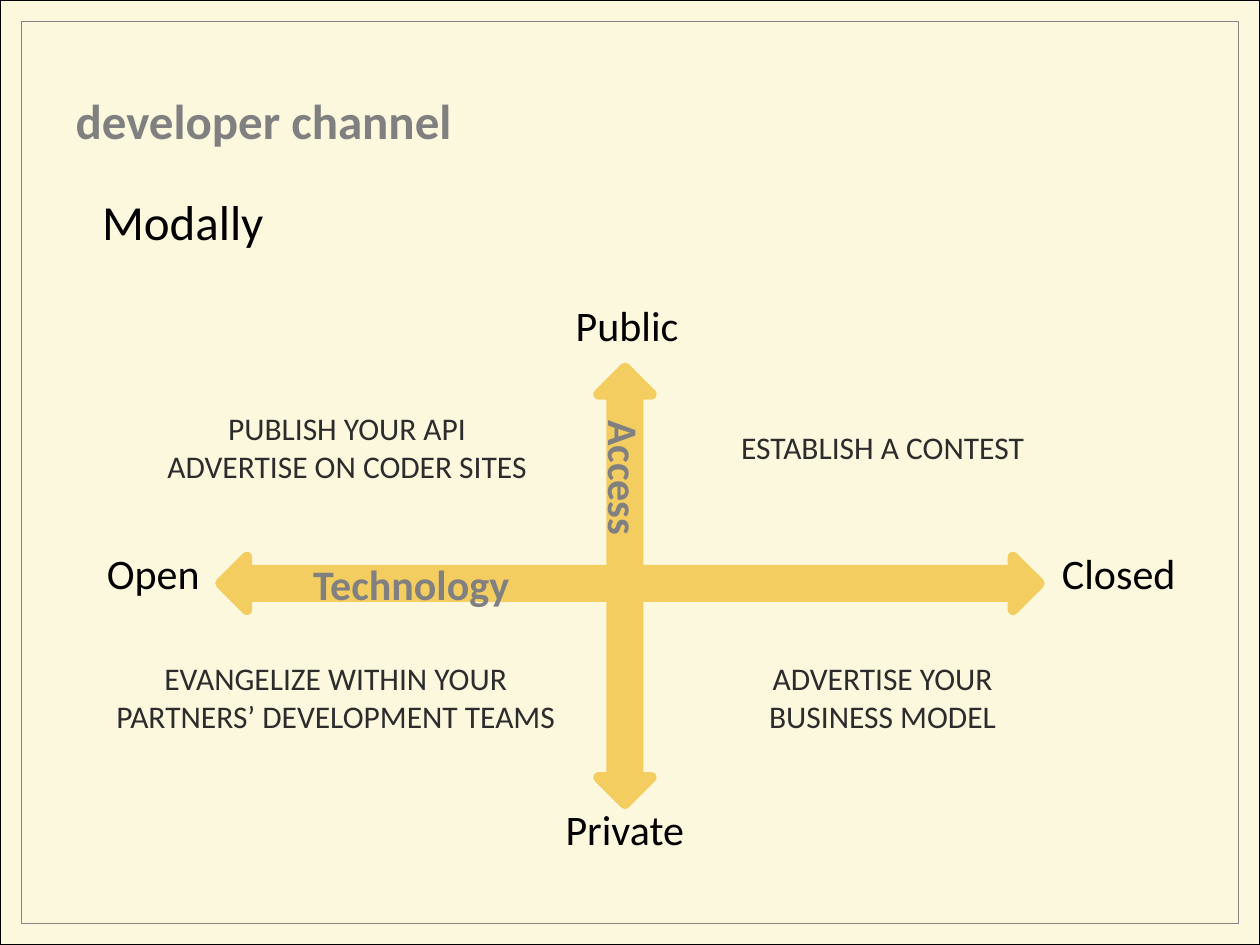
from pptx import Presentation
from pptx.dml.color import RGBColor
from pptx.enum.shapes import MSO_SHAPE as Shape
from pptx.enum.text import MSO_ANCHOR as Anchor, MSO_AUTO_SIZE as AutoSize, PP_ALIGN as Align
from pptx.util import Inches, Pt

CREAM, GOLD, GREY, BLACK, INK = "FCF8DE", "F3CD60", "808080", "000000", "2C2C2C"


def color(value):
    return RGBColor.from_string(value)


def write(frame, text, size, shade, bold=False, align=Align.LEFT, anchor=Anchor.MIDDLE):
    frame.text = text
    frame.vertical_anchor = anchor
    for paragraph in frame.paragraphs:
        paragraph.alignment = align
        paragraph.space_before = Pt(0)
        for run in paragraph.runs:
            run.font.name = "Calibri"
            run.font.size = Pt(size)
            run.font.bold = bold
            run.font.color.rgb = color(shade)


def place(holder, left, top, width, height):
    holder.left, holder.top = Inches(left), Inches(top)
    holder.width, holder.height = Inches(width), Inches(height)


def add_border(slide, margin, shade, weight):
    border = slide.shapes.add_shape(
        Shape.RECTANGLE, Inches(margin), Inches(margin),
        Inches(10 - 2 * margin), Inches(7.5 - 2 * margin))
    border.shadow.inherit = False
    border.fill.background()
    border.line.color.rgb = color(shade)
    border.line.width = Pt(weight)


def add_end_label(slide, text, left, top, width):
    label = slide.shapes.add_textbox(Inches(left), Inches(top), Inches(width), Inches(0.5))
    label.text_frame.word_wrap = False
    label.text_frame.auto_size = AutoSize.SHAPE_TO_FIT_TEXT
    write(label.text_frame, text, 24, BLACK, anchor=Anchor.TOP)


def add_tactic(slide, text, left, top, width):
    tactic = slide.shapes.add_textbox(Inches(left), Inches(top), Inches(width), Inches(0.4))
    tactic.text_frame.word_wrap = True
    write(tactic.text_frame, text, 18, INK, align=Align.CENTER)


def add_axis(slide, text, left, top, length, indent, rotation=0):
    axis = slide.shapes.add_shape(
        Shape.LEFT_RIGHT_ARROW, Inches(left), Inches(top), Inches(length), Inches(0.42))
    axis.rotation = rotation
    axis.shadow.inherit = False
    axis.fill.solid()
    axis.fill.fore_color.rgb = color(GOLD)
    axis.line.color.rgb = color(GOLD)
    axis.line.width = Pt(6)
    axis.text_frame.margin_left = Inches(indent)
    write(axis.text_frame, text, 24, GREY, bold=True)


def main():
    prs = Presentation()
    prs.slide_width, prs.slide_height = Inches(10), Inches(7.5)
    slide = prs.slides.add_slide(prs.slide_layouts[1])

    # Background and borders
    slide.background.fill.solid()
    slide.background.fill.fore_color.rgb = color(CREAM)
    add_border(slide, 0, BLACK, 0.75)
    add_border(slide, 0.17, "848484", 0.5)

    # Title and subtitle
    title, subtitle = slide.placeholders
    place(title, 0.5, 0.67, 9, 0.57)
    write(title.text_frame, "developer channel", 28, GREY, bold=True)
    place(subtitle, 0.71, 1.42, 3.79, 0.67)
    write(subtitle.text_frame, "Modally", 28, BLACK)
    properties = subtitle.text_frame.paragraphs[0]._p.get_or_add_pPr()
    properties.set("marL", "0")
    properties.set("indent", "0")
    properties.insert_element_before(
        properties.makeelement("{http://schemas.openxmlformats.org/drawingml/2006/main}buNone", {}),
        "a:tabLst", "a:defRPr", "a:extLst")

    # Ends of the axes
    for end in [("Open", 0.75, 4.3, 0.95), ("Closed", 8.33, 4.3, 1.11),
                ("Public", 4.47, 2.33, 1.03), ("Private", 4.39, 6.33, 1.15)]:
        add_end_label(slide, *end)

    # Tactics in the four quadrants
    for tactic in [
        ("PUBLISH YOUR API\nADVERTISE ON CODER SITES", 0.92, 3.35, 3.67),
        ("ESTABLISH A CONTEST", 5.17, 3.35, 3.67),
        ("ADVERTISE YOUR\nBUSINESS MODEL", 5.17, 5.33, 3.67),
        ("EVANGELIZE WITHIN YOUR PARTNERS’ DEVELOPMENT TEAMS", 0.75, 5.33, 3.83),
    ]:
        add_tactic(slide, *tactic)

    # Crossing axes
    add_axis(slide, "Technology", 1.75, 4.42, 6.5, 0.63)
    add_axis(slide, "Access", 3.23, 4.44, 3.46, 0.31, rotation=90)

    prs.save("out.pptx")


if __name__ == "__main__":
    main()
